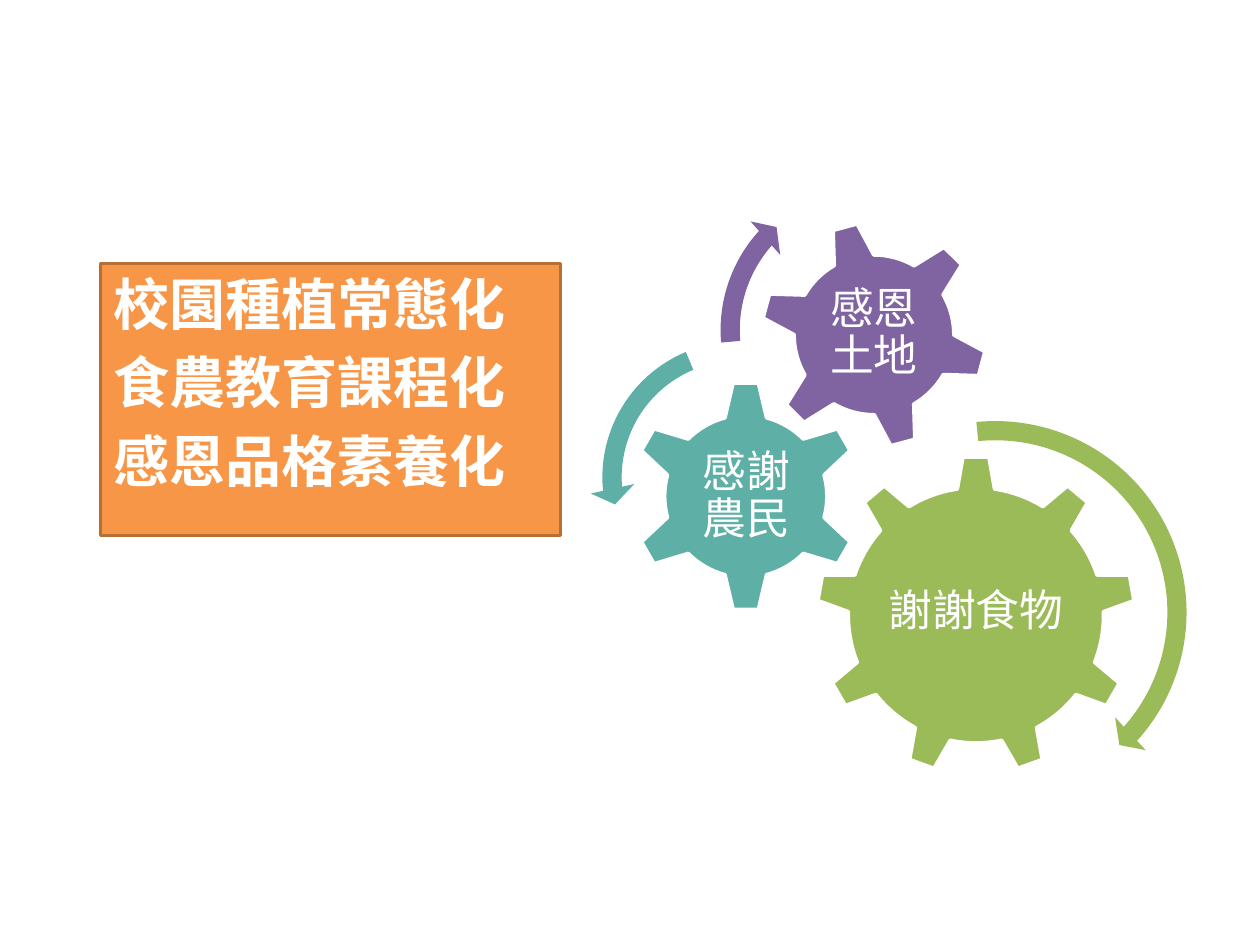
from dataclasses import dataclass

from pptx import Presentation
from pptx.dml.color import RGBColor
from pptx.enum.shapes import MSO_SHAPE as Kind
from pptx.enum.text import MSO_ANCHOR as Anchor, PP_ALIGN as Align
from pptx.shapes.autoshape import Shape
from pptx.slide import Slide
from pptx.text.text import TextFrame
from pptx.util import Cm, Pt

HUES = {
    "white": "FFFFFF",
    "green": "9BBB59",
    "teal": "5EAFA6",
    "purple": "8064A2",
    "orange": "F79646",
    "brown": "B76F34",
}
FONT = "Calibri"


@dataclass
class Box:
    left: float
    top: float
    width: float
    height: float

    def cm(self) -> list[Cm]:
        return [Cm(n) for n in (self.left, self.top, self.width, self.height)]


@dataclass
class Gear:
    kind: Kind
    box: Box
    hue: str
    text: str
    label: Box
    turn: float = 0


@dataclass
class Arrow:
    kind: Kind
    box: Box
    hue: str
    bends: tuple[float, ...]


GEARS = [
    Gear(Kind.GEAR_9, Box(16.46, 9.19, 6.43, 6.43), "green", "謝謝食物",
         Box(17.75, 10.69, 3.84, 3.3)),
    Gear(Kind.GEAR_6, Box(12.7, 7.67, 4.67, 4.67), "teal", "感謝農民",
         Box(13.89, 8.86, 2.31, 2.31)),
    Gear(Kind.GEAR_6, Box(15.32, 4.45, 4.6, 4.6), "purple", "感恩土地",
         Box(16.33, 5.44, 2.57, 2.57), 345),
]
ARROWS = [
    Arrow(Kind.CIRCULAR_ARROW, Box(15.95, 8.23, 8.23, 8.23), "green",
          (0.047, 2.99, 25.167, 158.602, 0.055)),
    Arrow(Kind.LEFT_CIRCULAR_ARROW, Box(11.89, 6.63, 5.99, 5.99), "teal",
          (0.065, 4.3, 104.891, 148.378, 0.075)),
    Arrow(Kind.CIRCULAR_ARROW, Box(14.27, 3.43, 6.45, 6.45), "purple",
          (0.06, 3.941, 133.138, 105.082, 0.07)),
]
GOALS = ["校園種植常態化", "食農教育課程化", "感恩品格素養化"]


def paint(hue: str) -> RGBColor:
    return RGBColor.from_string(HUES[hue])


def add_form(slide: Slide, kind: Kind, box: Box, hue: str, edge: str = "") -> Shape:
    form = slide.shapes.add_shape(kind, *box.cm())
    form.shadow.inherit = False
    form.fill.solid()
    form.fill.fore_color.rgb = paint(hue)
    if edge:
        form.line.color.rgb = paint(edge)
        form.line.width = Pt(2)
    else:
        form.line.fill.background()
    return form


def style(frame: TextFrame, size: float, align: Align, bold: bool = False) -> None:
    frame.word_wrap = True
    for para in frame.paragraphs:
        para.alignment = align
        for run in para.runs:
            run.font.name = FONT
            run.font.size = Pt(size)
            run.font.bold = bold
            run.font.color.rgb = paint("white")


def add_gear(slide: Slide, gear: Gear) -> None:
    form = add_form(slide, gear.kind, gear.box, gear.hue, "white")
    form.rotation = gear.turn
    frame = slide.shapes.add_textbox(*gear.label.cm()).text_frame
    frame.text = gear.text
    frame.vertical_anchor = Anchor.MIDDLE
    frame.margin_left = frame.margin_right = Cm(0.08)
    frame.margin_top = frame.margin_bottom = Cm(0.08)
    style(frame, 25, Align.CENTER)
    frame.paragraphs[0].line_spacing = 0.9


def add_arrow(slide: Slide, arrow: Arrow) -> None:
    form = add_form(slide, arrow.kind, arrow.box, arrow.hue)
    for spot, bend in enumerate(arrow.bends):
        form.adjustments[spot] = bend


def add_goals(slide: Slide) -> None:
    form = add_form(slide, Kind.RECTANGLE, Box(2.03, 5.31, 9.27, 5.49),
                    "orange", "brown")
    frame = form.text_frame
    frame.text = "\n".join(GOALS)
    frame.vertical_anchor = Anchor.TOP
    style(frame, 32, Align.LEFT, True)
    for para in frame.paragraphs[1:]:
        para.space_before = Pt(6.4)


def main() -> None:
    deck = Presentation()
    deck.slide_width = Cm(25.4)
    deck.slide_height = Cm(19.05)
    slide = deck.slides.add_slide(deck.slide_layouts[6])
    for gear in GEARS:
        add_gear(slide, gear)
    for arrow in ARROWS:
        add_arrow(slide, arrow)
    add_goals(slide)
    deck.save("out.pptx")


if __name__ == "__main__":
    main()
